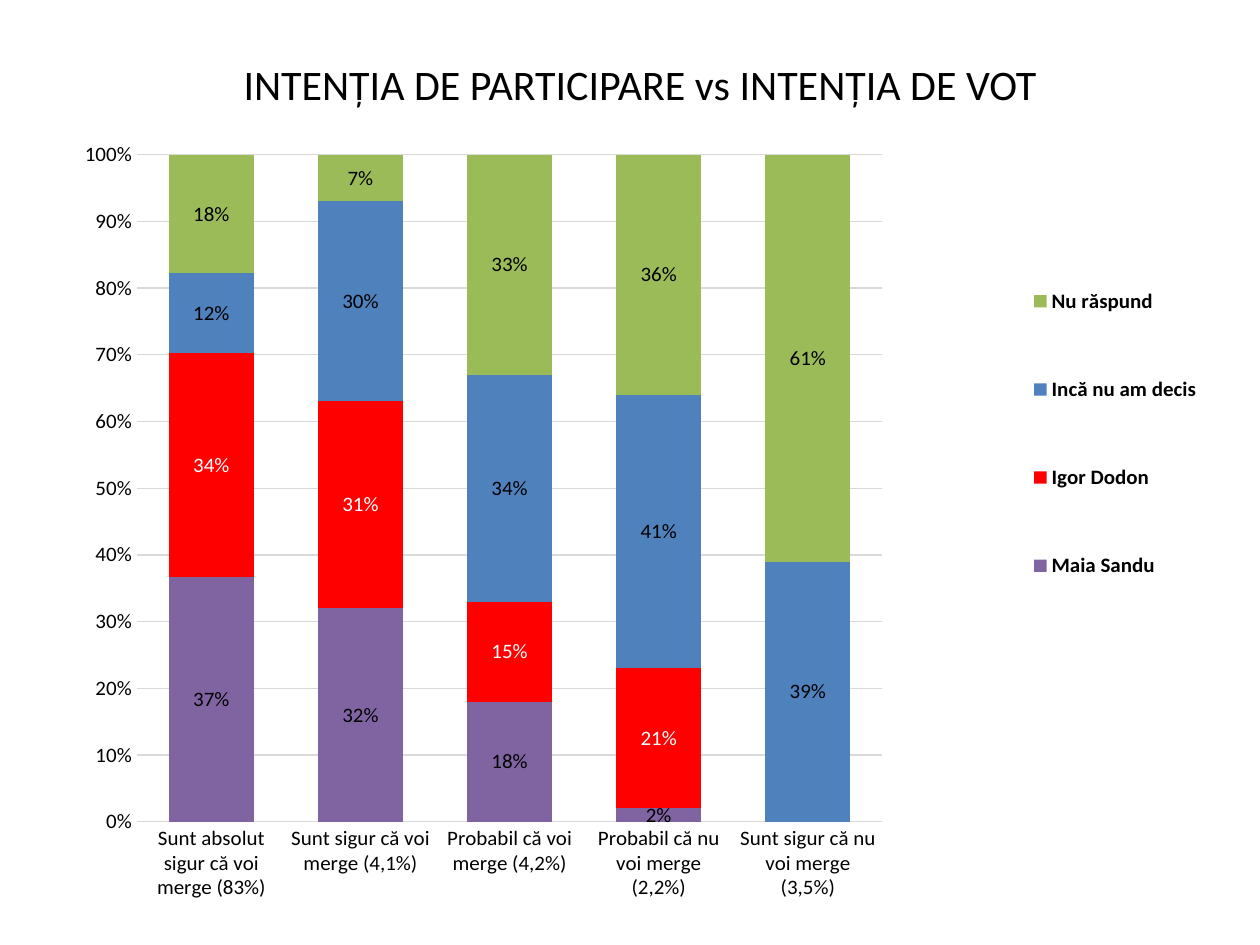
from dataclasses import dataclass

from lxml import etree
from pptx import Presentation
from pptx import util as u
from pptx.chart.data import CategoryChartData
from pptx.dml.color import RGBColor
from pptx.enum import chart as ch, text
from pptx.oxml.ns import qn

WIDE, HIGH = u.Inches(10), u.Inches(7.5)
FONT = "Calibri"
HUES = {
    "black": "000000", "white": "FFFFFF", "grid": "D9D9D9", "violet": "8064A2",
    "red": "FF0000", "blue": "4F81BD", "green": "9BBB59",
}
GROUPS = [
    "Sunt absolut sigur că voi merge (83%)",
    "Sunt sigur că voi merge (4,1%)",
    "Probabil că voi merge (4,2%)",
    "Probabil că nu voi merge (2,2%)",
    "Sunt sigur că nu voi merge (3,5%)",
]


@dataclass
class Choice:
    name: str
    votes: tuple
    fill: str
    ink: str = "black"


@dataclass
class Box:
    left: float
    top: float
    width: float
    height: float

    def scale(self) -> tuple:
        return tuple(int(share * side) for share, side in (
            (self.left, WIDE), (self.top, HIGH), (self.width, WIDE), (self.height, HIGH)))


CHOICES = [
    Choice("Maia Sandu", (0.37, 0.32, 0.18, 0.02, None), "violet"),
    Choice("Igor Dodon", (0.34, 0.31, 0.15, 0.21, None), "red", "white"),
    Choice("Incă nu am decis", (0.12, 0.3, 0.34, 0.41, 0.39), "blue"),
    Choice("Nu răspund", (0.18, 0.07, 0.33, 0.36, 0.61), "green"),
]


def tint(name: str) -> RGBColor:
    return RGBColor.from_string(HUES[name])


def style(font, size: float, ink: str = "black", bold: bool = False) -> None:
    font.name, font.size, font.bold = FONT, u.Pt(size), bold
    font.color.rgb = tint(ink)


def rule(line) -> None:
    line.color.rgb = tint("grid")
    line.width = u.Pt(0.75)


def place(part, index: int, box: Box, inner: bool = False) -> None:
    for old in part.findall(qn("c:layout")):
        part.remove(old)
    layout = etree.Element(qn("c:layout"))
    manual = etree.SubElement(layout, qn("c:manualLayout"))
    marks = [("layoutTarget", "inner")] if inner else []
    marks += [("xMode", "edge"), ("yMode", "edge"), ("x", box.left), ("y", box.top),
              ("w", box.width), ("h", box.height)]
    for tag, val in marks:
        etree.SubElement(manual, qn(f"c:{tag}")).set("val", str(val))
    part.insert(index, layout)


def head(slide, words: str, box: Box) -> None:
    title = slide.shapes.title
    title.left, title.top, title.width, title.height = box.scale()
    frame = title.text_frame
    frame.text = words
    frame.vertical_anchor = text.MSO_ANCHOR.MIDDLE
    para = frame.paragraphs[0]
    para.alignment = text.PP_ALIGN.CENTER
    style(para.runs[0].font, 24)


def axes(chart) -> None:
    for axis in (chart.category_axis, chart.value_axis):
        axis.major_tick_mark = axis.minor_tick_mark = ch.XL_TICK_MARK.NONE
        style(axis.tick_labels.font, 12)
    rule(chart.category_axis.format.line)
    scale = chart.value_axis
    scale.format.line.fill.background()
    scale.minimum_scale, scale.maximum_scale, scale.major_unit = 0, 1, 0.1
    scale.has_major_gridlines = True
    rule(scale.major_gridlines.format.line)
    scale.tick_labels.number_format = "0%"
    scale.tick_labels.number_format_is_linked = False


def bars(plot) -> None:
    plot.gap_width, plot.overlap, plot.vary_by_categories = 75, 100, False
    for series, choice in zip(plot.series, CHOICES):
        series.format.fill.solid()
        series.format.fill.fore_color.rgb = tint(choice.fill)
        labels = series.data_labels
        labels.show_value = True
        labels.number_format, labels.number_format_is_linked = "0%", False
        style(labels.font, 12, choice.ink)


def graph(slide, box: Box) -> None:
    data = CategoryChartData(number_format="0%")
    data.categories = GROUPS
    for choice in CHOICES:
        data.add_series(choice.name, choice.votes)
    kind = ch.XL_CHART_TYPE.COLUMN_STACKED_100
    chart = slide.shapes.add_chart(kind, *box.scale(), data).chart
    chart.has_title = False
    style(chart.font, 12)
    axes(chart)
    bars(chart.plots[0])
    chart.has_legend = True
    legend = chart.legend
    legend.position = ch.XL_LEGEND_POSITION.RIGHT
    legend.include_in_layout = False
    style(legend.font, 12, bold=True)
    root = chart.element
    place(root.find(f".//{qn('c:plotArea')}"), 0, Box(0.055, 0.025, 0.644, 0.897), True)
    place(root.find(f".//{qn('c:legend')}"), 1, Box(0.81, 0.12, 0.18, 0.56))


def main() -> None:
    """Build the slide on voting intention by intention to take part."""
    deck = Presentation()
    deck.slide_width, deck.slide_height = WIDE, HIGH
    slide = deck.slides.add_slide(deck.slide_layouts[5])
    head(slide, "INTENȚIA DE PARTICIPARE vs INTENȚIA DE VOT", Box(0.058, 0.033, 0.9, 0.11))
    graph(slide, Box(0.058, 0.144, 0.919, 0.808))
    deck.save("out.pptx")


if __name__ == "__main__":
    main()
